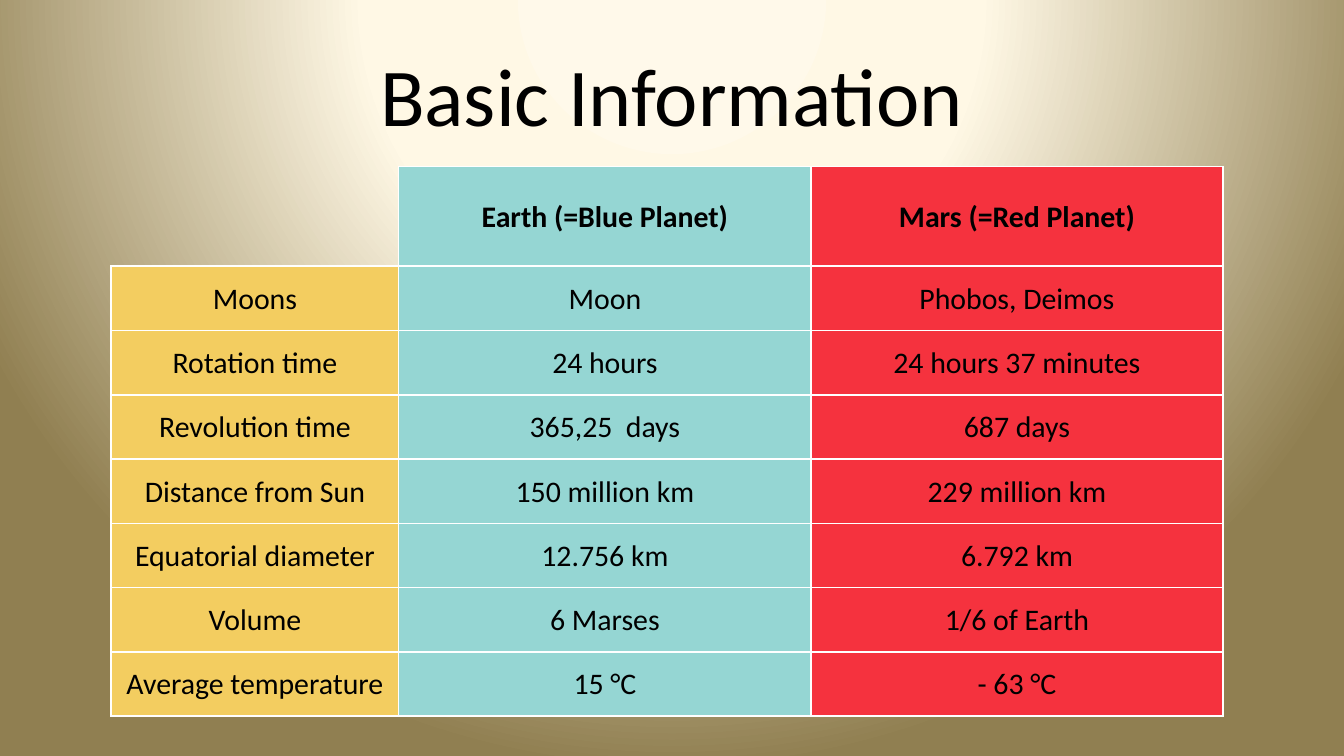
"""Build a slide that compares basic facts about Earth and Mars in a table."""
import pptx
import pptx.dml.color
import pptx.enum.text
import pptx.oxml
import pptx.oxml.ns
import pptx.util

Pt = pptx.util.Pt
MIDDLE = pptx.enum.text.MSO_ANCHOR.MIDDLE
NAMESPACES = pptx.oxml.ns.nsdecls("a", "p")
BLACK = "000000"
BORDER = "FFFFFF"
COLUMN_FILLS = ["F3CD60", "95D6D3", "F5323E"]
COLUMN_WIDTHS = [154, 221, 220.5]
HEADER_HEIGHT = 53.3
ROW_HEIGHT = 34.45
GRADIENT = [(0, "FFF9EA"), (40, "FFF8E5"), (100, "907F51")]
ROWS = [
    ("", "Earth (=Blue Planet)", "Mars (=Red Planet)"),
    ("Moons", "Moon", "Phobos, Deimos"),
    ("Rotation time", "24 hours", "24 hours 37 minutes"),
    ("Revolution time", "365,25  days", "687 days"),
    ("Distance from Sun", "150 million km", "229 million km"),
    ("Equatorial diameter", "12.756 km", "6.792 km"),
    ("Volume", "6 Marses", "1/6 of Earth"),
    ("Average temperature", "15 °C", "- 63 °C"),
]
CELL_FORMAT = {
    "vertical_anchor": MIDDLE,
    "margin_left": Pt(0.7),
    "margin_right": Pt(0.7),
    "margin_top": Pt(0.7),
    "margin_bottom": Pt(0),
}


def color(value):
    return pptx.dml.color.RGBColor.from_string(value)


def write(paragraph, text, size, bold=False):
    paragraph.alignment = pptx.enum.text.PP_ALIGN.CENTER
    run = paragraph.add_run()
    run.text = text
    for name, value in {"name": "Calibri", "size": Pt(size), "bold": bold}.items():
        setattr(run.font, name, value)
    run.font.color.rgb = color(BLACK)


presentation = pptx.Presentation()
presentation.slide_width = Pt(720)
presentation.slide_height = Pt(405)
slide = presentation.slides.add_slide(presentation.slide_layouts[6])

stops = "".join(
    f'<a:gs pos="{position * 1000}"><a:srgbClr val="{value}"/></a:gs>'
    for position, value in GRADIENT
)
slide.element.cSld.insert(0, pptx.oxml.parse_xml(
    f'<p:bg {NAMESPACES}><p:bgPr><a:gradFill rotWithShape="1"><a:gsLst>{stops}</a:gsLst>'
    '<a:path path="circle"><a:fillToRect l="50000" t="-80000" r="50000" b="180000"/></a:path>'
    '</a:gradFill><a:effectLst/></p:bgPr></p:bg>'
))

title = slide.shapes.add_textbox(Pt(36), Pt(16.5), Pt(648), Pt(67.5))
for name, value in {"word_wrap": True, "vertical_anchor": MIDDLE}.items():
    setattr(title.text_frame, name, value)
write(title.text_frame.paragraphs[0], "Basic Information", 44)

table = slide.shapes.add_table(
    len(ROWS), len(COLUMN_WIDTHS), Pt(59.6), Pt(89.3),
    Pt(sum(COLUMN_WIDTHS)), Pt(HEADER_HEIGHT + ROW_HEIGHT * (len(ROWS) - 1)),
).table
for column, width in zip(table.columns, COLUMN_WIDTHS):
    column.width = Pt(width)

for row_index, texts in enumerate(ROWS):
    table.rows[row_index].height = Pt(ROW_HEIGHT if row_index else HEADER_HEIGHT)
    for column_index, text in enumerate(texts):
        cell = table.cell(row_index, column_index)
        for name, value in CELL_FORMAT.items():
            setattr(cell, name, value)
        properties = cell._tc.get_or_add_tcPr()
        for side in ("lnL", "lnR", "lnT", "lnB"):
            hidden = not text and side in ("lnL", "lnT")
            line = "<a:noFill/>" if hidden else (
                f'<a:solidFill><a:srgbClr val="{BORDER}"/></a:solidFill>'
            )
            properties.append(pptx.oxml.parse_xml(
                f'<a:{side} {NAMESPACES} w="{Pt(1)}">{line}</a:{side}>'
            ))
        if text:
            cell.fill.solid()
            cell.fill.fore_color.rgb = color(COLUMN_FILLS[column_index])
            write(cell.text_frame.paragraphs[0], text, 16, bold=row_index == 0)
        else:
            cell.fill.background()

presentation.save("out.pptx")
